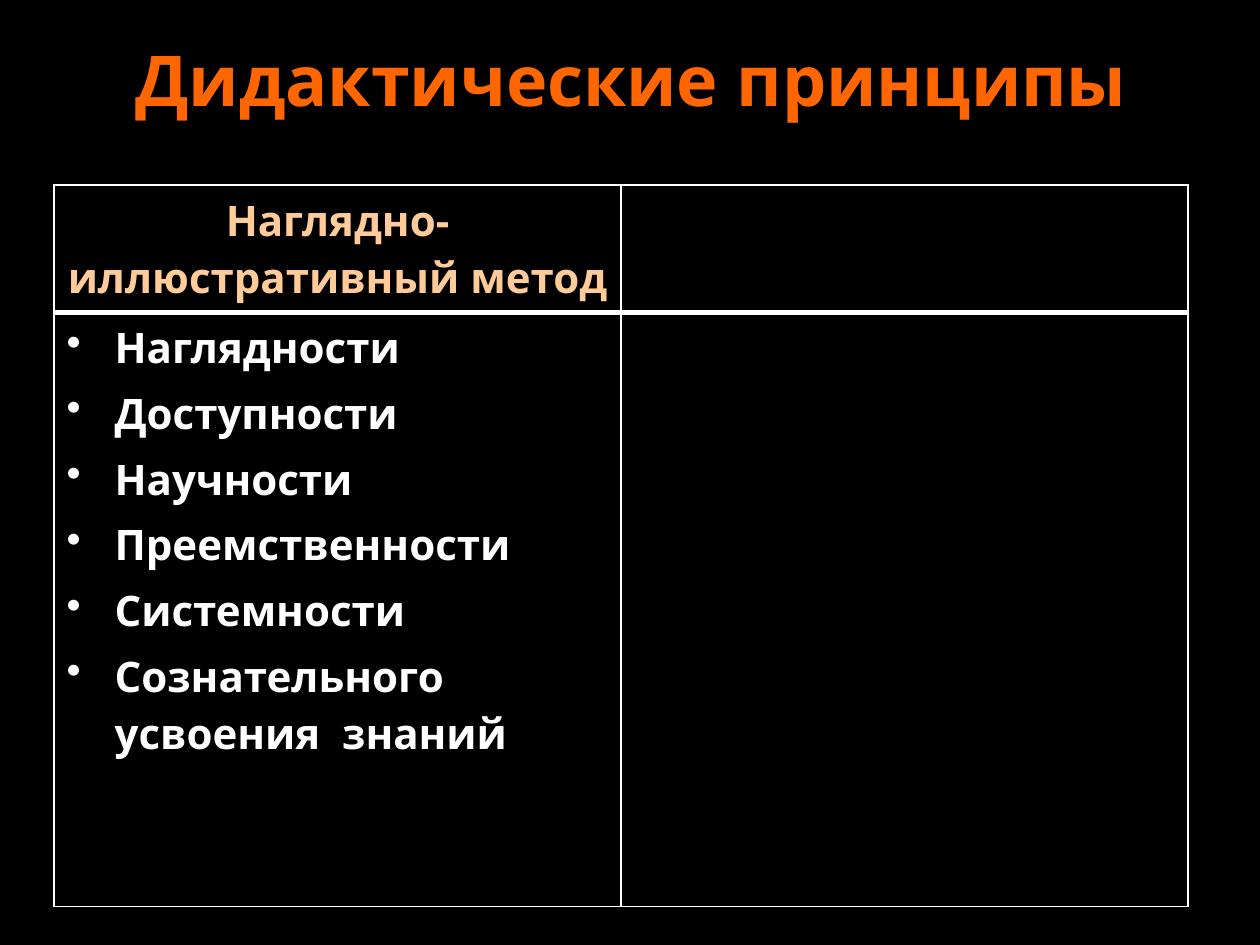
from dataclasses import dataclass

from lxml import etree
from pptx import Presentation, util as u
from pptx.dml.color import RGBColor
from pptx.enum import text
from pptx.oxml.ns import qn

PX = 914400 // 126
FONT = "Noto Sans"
WHITE, ORANGE, PEACH, BLACK = "FFFFFF", "FF6600", "FFCC99", "000000"
INDENT = 48
THIN, THICK = 1, 3


@dataclass
class Column:
    heading: str
    principles: list[str]


COLUMNS = [
    Column("Наглядно-иллюстративный метод", [
        "Наглядности", "Доступности", "Научности", "Преемственности",
        "Системности", "Сознательного усвоения  знаний",
    ]),
    Column("", []),
]


def px(length: int) -> int:
    return u.Emu(length * PX)


def color(value: str) -> RGBColor:
    return RGBColor.from_string(value)


def add_bullet(paragraph) -> None:
    properties = paragraph._p.get_or_add_pPr()
    properties.set("marL", str(px(INDENT)))
    properties.set("indent", str(-px(INDENT)))
    etree.SubElement(properties, qn("a:buChar"), char="•")


def write(frame, lines: list[str], *, size: int, fill: str,
          align=text.PP_ALIGN.LEFT, bullets: bool = False) -> None:
    for index, line in enumerate(lines):
        paragraph = frame.paragraphs[0] if index == 0 else frame.add_paragraph()
        paragraph.alignment = align
        if index:
            paragraph.space_before = u.Pt(size * 0.2)
        if bullets:
            add_bullet(paragraph)
        run = paragraph.add_run()
        run.text = line
        run.font.name, run.font.size, run.font.bold = FONT, u.Pt(size), True
        run.font.color.rgb = color(fill)


def set_borders(cell, **widths: int) -> None:
    """Draw the cell borders; they precede the fill in the cell properties."""
    properties = cell._tc.get_or_add_tcPr()
    for index, side in enumerate("LRTB"):
        width = widths.get(side, THIN)
        line = etree.Element(qn(f"a:ln{side}"), w=str(u.Pt(width)))
        fill = etree.SubElement(line, qn("a:solidFill"))
        etree.SubElement(fill, qn("a:srgbClr"), val=WHITE)
        properties.insert(index, line)


def add_principles_table(slide, columns: list[Column]) -> None:
    shape = slide.shapes.add_table(2, len(columns), px(54), px(185), px(1134), px(715))
    table = shape.table
    table.first_row = table.horz_banding = False
    table.rows[0].height, table.rows[1].height = px(121), px(594)
    for index, column in enumerate(columns):
        heading, body = table.cell(0, index), table.cell(1, index)
        for cell in (heading, body):
            cell.fill.background()
        set_borders(heading, B=THICK)
        set_borders(body, T=THICK)
        if column.heading:
            write(heading.text_frame, [column.heading], size=24, fill=PEACH,
                  align=text.PP_ALIGN.CENTER)
        write(body.text_frame, column.principles, size=24, fill=WHITE, bullets=True)


def main() -> None:
    presentation = Presentation()
    presentation.slide_width, presentation.slide_height = px(1260), px(945)
    slide = presentation.slides.add_slide(presentation.slide_layouts[5])
    slide.background.fill.solid()
    slide.background.fill.fore_color.rgb = color(BLACK)

    # Title
    title = slide.shapes.title
    title.left, title.top, title.width, title.height = px(64), px(16), px(1134), px(125)
    title.text_frame.vertical_anchor = text.MSO_ANCHOR.MIDDLE
    write(title.text_frame, ["Дидактические принципы"], size=40, fill=ORANGE,
          align=text.PP_ALIGN.CENTER)

    # Table of teaching principles
    add_principles_table(slide, COLUMNS)
    presentation.save("out.pptx")


if __name__ == "__main__":
    main()
